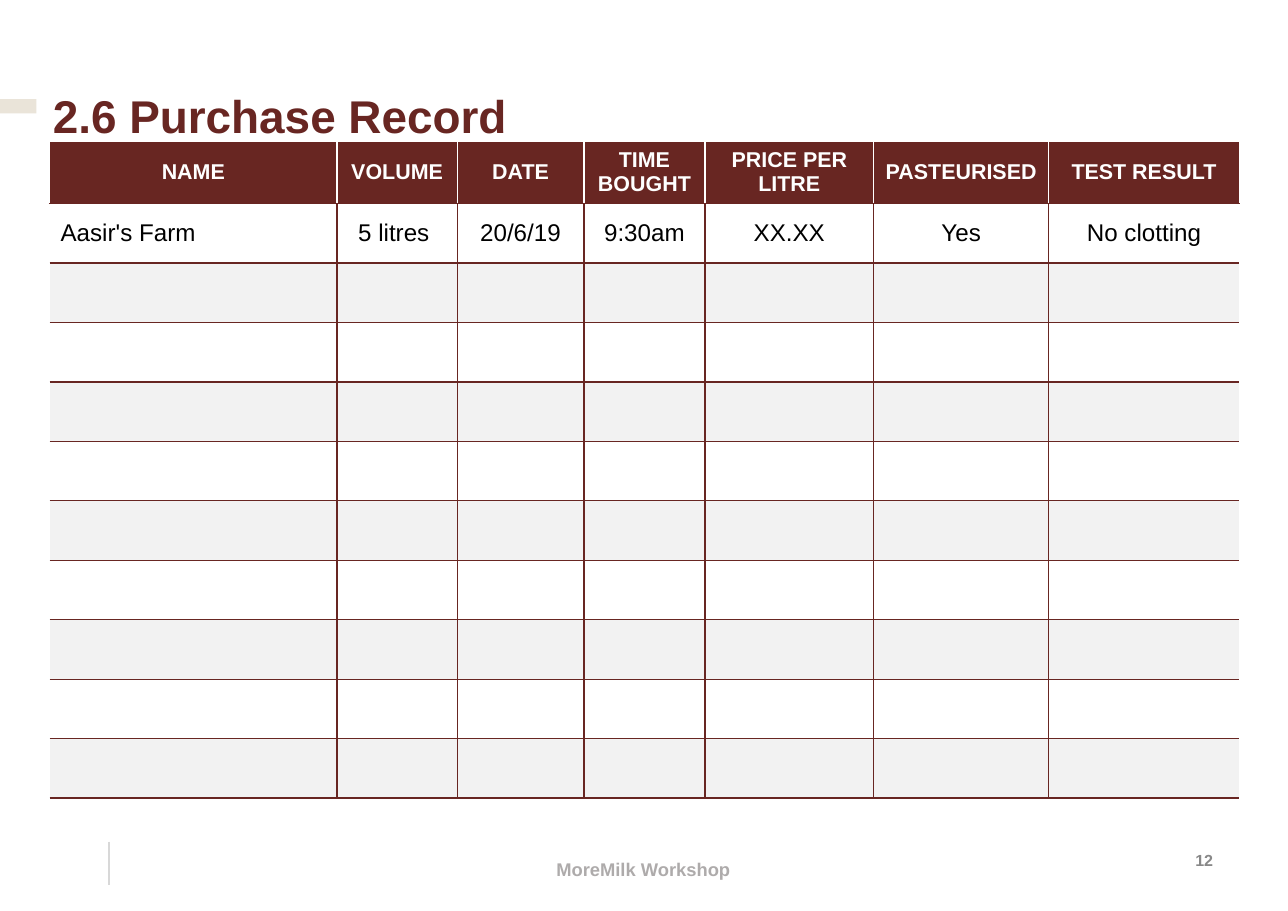
from pptx import Presentation
from pptx.dml.color import RGBColor
from pptx.enum.shapes import MSO_CONNECTOR, MSO_SHAPE
from pptx.enum.text import MSO_ANCHOR, PP_ALIGN
from pptx.oxml.ns import qn
from pptx.util import Inches, Pt
from lxml.etree import SubElement

TITLE = "2.6 Purchase Record"
WORKSHOP = "MoreMilk Workshop"
PAGE = "12"
HEADINGS = ["NAME", "VOLUME", "DATE", "TIME BOUGHT", "PRICE PER LITRE",
            "PASTEURISED", "TEST RESULT"]
PURCHASES = [["Aasir's Farm", "5 litres ", "20/6/19", "9:30am", "XX.XX",
              "Yes", "No clotting"]]
BLANK_ENTRIES = 9
COLUMN_WIDTHS = [2.61, 1.09, 1.15, 1.1, 1.53, 1.59, 1.73]
ROW_HEIGHT = 0.54
MAROON, WHITE, BAND, BEIGE, RULE = "682622", "FFFFFF", "F2F2F2", "EAE4D9", "D8D8D8"


def color(value):
    return RGBColor.from_string(value)


def paint(item, value):
    item.fill.solid()
    item.fill.fore_color.rgb = color(value)


def write(paragraph, text, size, value, bold=True, align=PP_ALIGN.CENTER):
    paragraph.text = text
    paragraph.alignment = align
    font = paragraph.font
    font.name, font.size, font.bold = "Arial", Pt(size), bold
    font.color.rgb = color(value)


def add_text(slide, box, insets, text, size, value, anchor=MSO_ANCHOR.MIDDLE,
             align=PP_ALIGN.CENTER):
    frame = slide.shapes.add_textbox(*map(Inches, box)).text_frame
    frame.word_wrap = True
    frame.vertical_anchor = anchor
    (frame.margin_left, frame.margin_top,
     frame.margin_right, frame.margin_bottom) = map(Inches, insets)
    write(frame.paragraphs[0], text, size, value, align=align)
    return frame.paragraphs[0]


def add_block(slide, box, value):
    block = slide.shapes.add_shape(MSO_SHAPE.RECTANGLE, *map(Inches, box))
    block.shadow.inherit = False
    paint(block, value)
    block.line.fill.background()


def set_borders(cell, borders):
    properties = cell._tc.get_or_add_tcPr()
    for index, (side, value) in enumerate(borders.items()):
        line = properties.makeelement(qn(f"a:{side}"), {"w": str(Pt(1))})
        properties.insert(index, line)
        if value:
            SubElement(SubElement(line, qn("a:solidFill")), qn("a:srgbClr"), val=value)
        else:
            SubElement(line, qn("a:noFill"))


def add_record(slide):
    entries = [HEADINGS] + PURCHASES + [[""] * len(HEADINGS)] * BLANK_ENTRIES
    table = slide.shapes.add_table(
        len(entries), len(HEADINGS), Inches(0.45), Inches(1.28),
        Inches(sum(COLUMN_WIDTHS)), Inches(ROW_HEIGHT * len(entries))).table
    for column, width in zip(table.columns, COLUMN_WIDTHS):
        column.width = Inches(width)
    last = len(HEADINGS) - 1
    for r, entry in enumerate(entries):
        table.rows[r].height = Inches(ROW_HEIGHT)
        heading = r == 0
        grid = WHITE if heading else MAROON
        for c, text in enumerate(entry):
            cell = table.cell(r, c)
            cell.vertical_anchor = MSO_ANCHOR.MIDDLE
            paint(cell, MAROON if heading else WHITE if r % 2 else BAND)
            set_borders(cell, {
                "lnL": grid if heading or c > 0 else None,
                "lnR": grid if heading or c < last else None,
                "lnT": grid,
                "lnB": MAROON})
            if heading:
                write(cell.text_frame.paragraphs[0], text, 14, WHITE)
            elif text:
                align = PP_ALIGN.CENTER if c else PP_ALIGN.LEFT
                write(cell.text_frame.paragraphs[0], text, 15.8, "000000", False, align)


def main():
    deck = Presentation()
    deck.slide_width, deck.slide_height = Inches(11.69), Inches(8.27)
    slide = deck.slides.add_slide(deck.slide_layouts[6])

    add_text(slide, (4.37, 7.59, 2.94, 0.55), (0.1, 0.05, 0.1, 0), WORKSHOP, 12, "AEABAB")
    add_text(slide, (10.68, 7.61, 0.5, 0.4), (0.1, 0.05, 0.1, 0.05), PAGE, 10.5, "888888")

    divider = slide.shapes.add_connector(
        MSO_CONNECTOR.STRAIGHT, Inches(0.99), Inches(7.64), Inches(0.99), Inches(8.03))
    divider.line.color.rgb = color(RULE)
    divider.line.width = Pt(0.75)
    SubElement(divider._element.spPr, qn("a:effectLst"))

    add_block(slide, (0, 0.9, 0.33, 0.13), BEIGE)
    heading = add_text(slide, (0.28, 0.16, 10.97, 1.13), (0.2, 0.59, 0.1, 0.05), TITLE,
                       30, MAROON, MSO_ANCHOR.TOP, PP_ALIGN.LEFT)
    heading.line_spacing = 1.1
    add_record(slide)
    deck.save("out.pptx")


if __name__ == "__main__":
    main()
